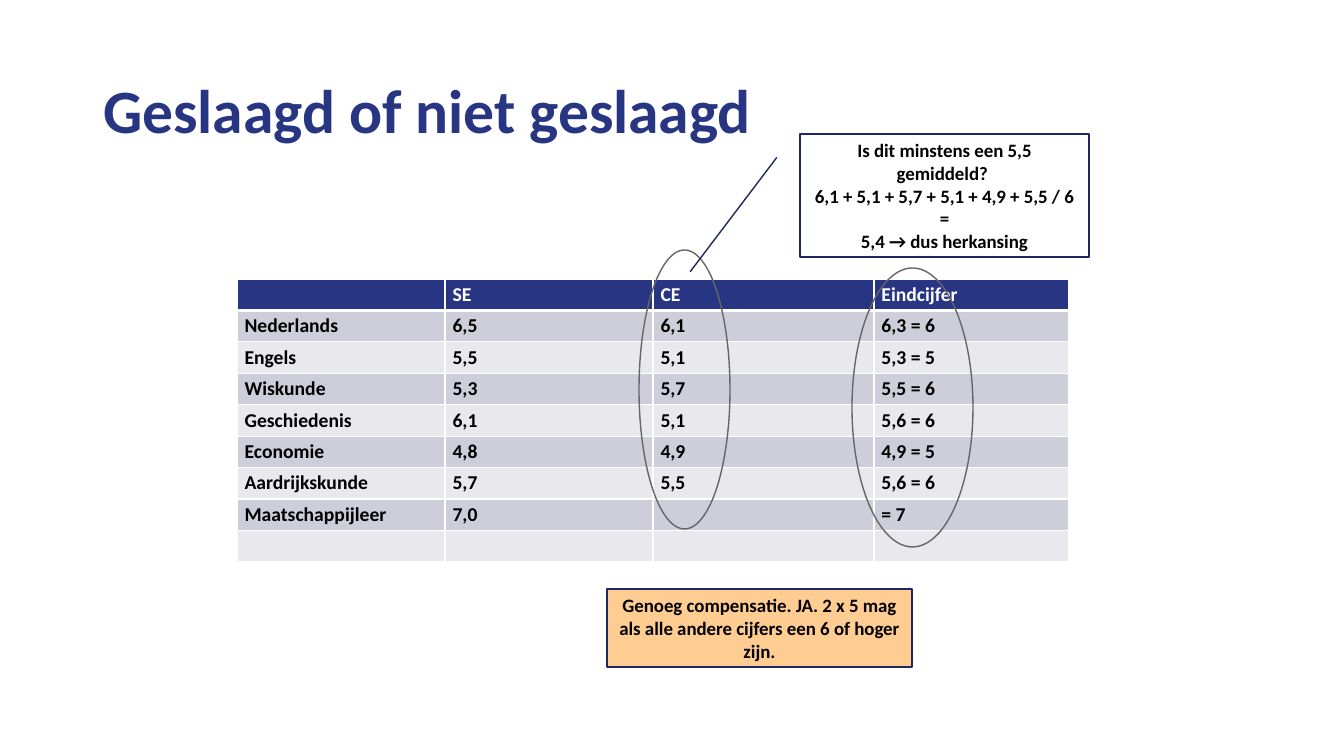
import lxml.etree
import pptx
import pptx.dml.color
import pptx.enum.shapes
import pptx.enum.text
import pptx.oxml.ns
import pptx.util

# Content
TITLE = "Geslaagd of niet geslaagd"
GRADES = [
    ("", "SE", "CE", "Eindcijfer"),
    ("Nederlands", "6,5", "6,1", "6,3 = 6"),
    ("Engels", "5,5", "5,1", "5,3 = 5"),
    ("Wiskunde", "5,3", "5,7", "5,5 = 6"),
    ("Geschiedenis", "6,1", "5,1", "5,6 = 6"),
    ("Economie", "4,8", "4,9", "4,9 = 5"),
    ("Aardrijkskunde", "5,7", "5,5", "5,6 = 6"),
    ("Maatschappijleer", "7,0", "", "= 7"),
    ("", "", "", ""),
]
CHECK = [
    "Is dit minstens een 5,5 gemiddeld? ",
    "6,1 + 5,1 + 5,7 + 5,1 + 4,9 + 5,5 / 6 =",
    "5,4 → dus herkansing",
]
RESULT = ["Genoeg compensatie. JA. 2 x 5 mag als alle andere cijfers een 6 of hoger zijn."]

# Layout in px and style
TABLE_X, TABLE_Y, ROW = 237, 279, 31
COLS = [208, 208, 221, 195]
FONT = "Calibri"
BLUE, NAVY, GREY, PEACH = "283583", "1E2761", "666666", "FFCC92"
BLACK, WHITE = "000000", "FFFFFF"
BANDS = ["E8E8ED", "CDCED9"]
KINDS = pptx.enum.shapes.MSO_SHAPE
CENTER = pptx.enum.text.PP_ALIGN.CENTER
MIDDLE = pptx.enum.text.MSO_ANCHOR.MIDDLE


def px(n):
    return round(n * 914400 / 100.8)


def color(value):
    return pptx.dml.color.RGBColor.from_string(value)


def write(para, text, size, ink):
    run = para.add_run()
    run.text = text
    run.font.name, run.font.size = FONT, pptx.util.Pt(size)
    run.font.bold = True
    run.font.color.rgb = color(ink)


def node(parent, tag, **attrs):
    return lxml.etree.SubElement(parent, pptx.oxml.ns.qn("a:" + tag), **attrs)


def edge(cell, widths):
    props = cell._tc.get_or_add_tcPr()
    for side, width in widths.items():
        line = node(props, "ln" + side, w=str(pptx.util.Pt(width)))
        node(node(line, "solidFill"), "srgbClr", val=WHITE)


def shape(kind, box, line, fill=None, lines=()):
    item = slide.shapes.add_shape(kind, *map(px, box))
    item.shadow.inherit = False
    if fill:
        item.fill.solid()
        item.fill.fore_color.rgb = color(fill)
    else:
        item.fill.background()
    item.line.color.rgb = color(line)
    item.line.width = pptx.util.Pt(1)
    frame = item.text_frame
    frame.word_wrap, frame.vertical_anchor = True, MIDDLE
    for i, text in enumerate(lines):
        para = frame.add_paragraph() if i else frame.paragraphs[0]
        para.alignment = CENTER
        write(para, text, 13.5, BLACK)
    return item


deck = pptx.Presentation()
deck.slide_width, deck.slide_height = px(1344), px(756)
slide = deck.slides.add_slide(deck.slide_layouts[5])

# Title
title = slide.shapes.title
title.left, title.top, title.width, title.height = map(px, (93, 41, 1159, 146))
title.text_frame.vertical_anchor = MIDDLE
para = title.text_frame.paragraphs[0]
para.alignment = pptx.enum.text.PP_ALIGN.LEFT
para.line_spacing = 0.9
write(para, TITLE, 44, BLUE)

# Grade table
table = slide.shapes.add_table(
    len(GRADES), len(COLS), px(TABLE_X), px(TABLE_Y), px(sum(COLS)), px(ROW * len(GRADES))
).table
for col, width in zip(table.columns, COLS):
    col.width = px(width)
for r, grades in enumerate(GRADES):
    table.rows[r].height = px(ROW)
    for c, text in enumerate(grades):
        cell = table.cell(r, c)
        cell.margin_left = cell.margin_right = pptx.util.Pt(5.4)
        cell.margin_top = cell.margin_bottom = pptx.util.Pt(2.7)
        edge(cell, {"L": 1, "R": 1, "T": 3 if r == 1 else 1, "B": 1 if r else 3})
        cell.fill.solid()
        cell.fill.fore_color.rgb = color(BANDS[r % 2] if r else BLUE)
        para = cell.text_frame.paragraphs[0]
        if text:
            write(para, text, 14, BLACK if r else WHITE)
        else:
            node(node(para._p, "endParaRPr", sz="1400"), "latin", typeface=FONT)

# Rings around the exam and final grades, with the average check between
shape(KINDS.OVAL, (639, 250, 91, 279), GREY)
note = shape(KINDS.LINE_CALLOUT_1, (800, 134, 289, 123), NAVY, lines=CHECK)
for i, part in enumerate((0.19, -0.08, 1.12, -0.38)):
    note.adjustments[i] = part
shape(KINDS.OVAL, (852, 268, 121, 279), GREY)

# Result
shape(KINDS.RECTANGLE, (607, 589, 305, 78), NAVY, PEACH, RESULT)

deck.save("out.pptx")
